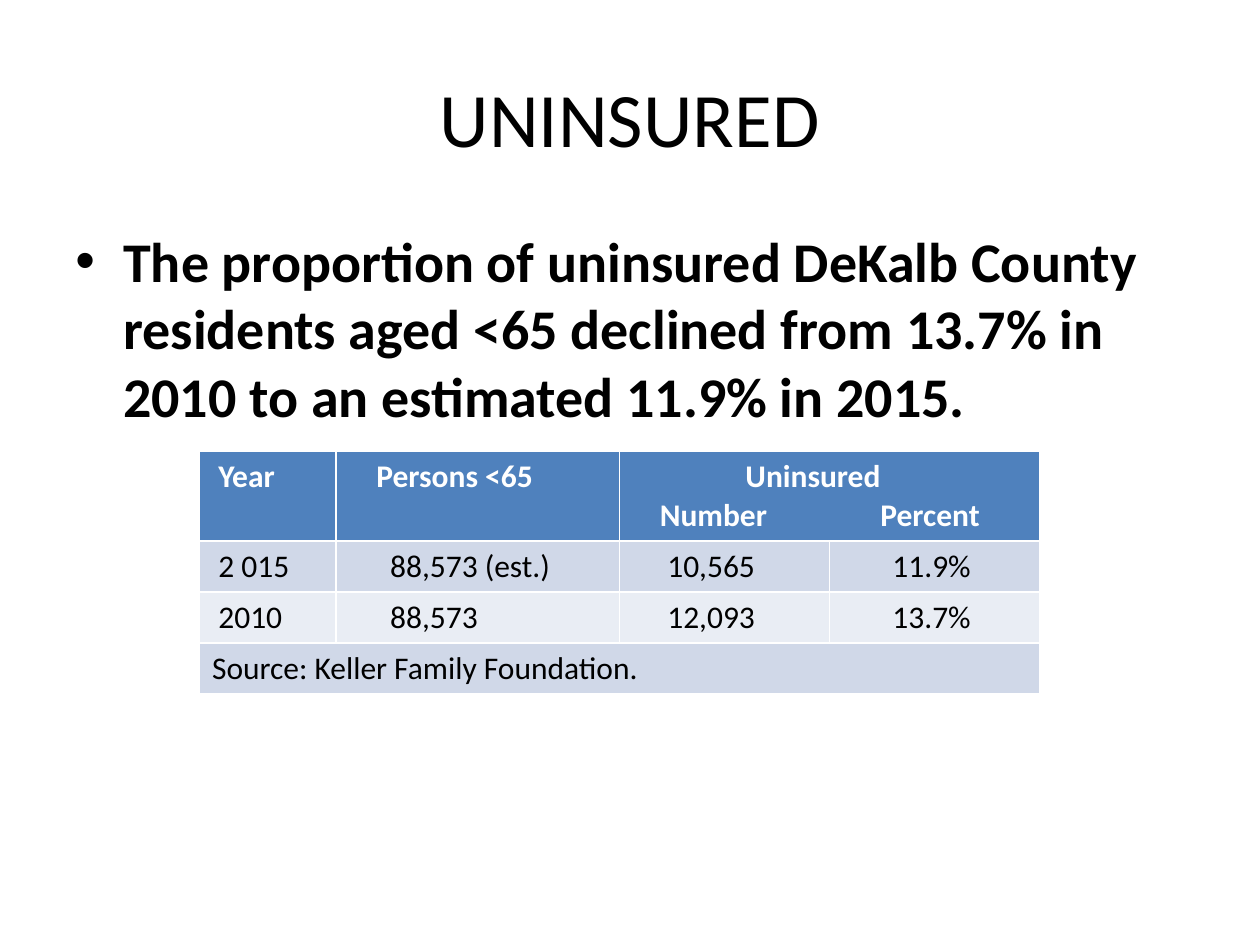
from dataclasses import dataclass

from lxml import etree
from pptx import Presentation
from pptx.dml.color import RGBColor
from pptx.enum import text
from pptx.oxml import ns
from pptx.util import Inches, Pt

WIDTH, HEIGHT = Inches(10), Inches(7.5)
COLUMNS, ROWS = 120, 90
FONT = "Calibri"
BLACK, WHITE = "000000", "FFFFFF"
HEADER, BAND, PLAIN = "4F81BD", "D0D8E8", "E9EDF4"


@dataclass
class Area:
    column: float
    row: float
    columns: float
    rows: float

    def lengths(self) -> tuple[int, int, int, int]:
        return (across(self.column), down(self.row),
                across(self.columns), down(self.rows))


@dataclass
class Style:
    size: float
    color: str = BLACK
    bold: bool = False


@dataclass
class Line:
    words: str
    indent: float = 0
    tabs: tuple[float, ...] = ()


@dataclass
class Entry:
    row: int
    column: int
    lines: list[Line]
    last_column: int | None = None


def across(columns: float) -> int:
    return round(WIDTH * columns / COLUMNS)


def down(rows: float) -> int:
    return round(HEIGHT * rows / ROWS)


def color(value: str) -> RGBColor:
    return RGBColor.from_string(value)


def style_para(para, style: Style) -> None:
    para.font.name = FONT
    para.font.size = Pt(style.size)
    para.font.bold = style.bold
    para.font.color.rgb = color(style.color)


def add_text(page, area: Area, words: str, style: Style):
    box = page.shapes.add_textbox(*area.lengths())
    box.text_frame.word_wrap = True
    para = box.text_frame.paragraphs[0]
    para.text = words
    style_para(para, style)
    return box, para


def add_bullet(para, indent: float) -> None:
    properties = para._p.get_or_add_pPr()
    properties.set("marL", str(Inches(indent)))
    properties.set("indent", str(-Inches(indent)))
    font = etree.Element(ns.qn("a:buFont"), typeface="Arial")
    mark = etree.Element(ns.qn("a:buChar"), char="•")
    spot = properties.find(ns.qn("a:defRPr"))
    spot.addprevious(font)
    spot.addprevious(mark)


def set_line(para, line: Line, style: Style) -> None:
    para.text = line.words
    style_para(para, style)
    properties = para._p.get_or_add_pPr()
    properties.set("marL", str(Inches(line.indent)))
    if line.tabs:
        stops = etree.Element(ns.qn("a:tabLst"))
        for position in line.tabs:
            etree.SubElement(stops, ns.qn("a:tab"), pos=str(Inches(position)), algn="l")
        properties.find(ns.qn("a:defRPr")).addprevious(stops)


def add_grid(page, area: Area, widths: list[float], heights: list[float],
             fills: list[str], entries: list[Entry]) -> None:
    table = page.shapes.add_table(len(heights), len(widths), *area.lengths()).table
    for column, width in zip(table.columns, widths):
        column.width = across(width)
    for row, height, fill in zip(table.rows, heights, fills):
        row.height = down(height)
        for cell in row.cells:
            cell.fill.solid()
            cell.fill.fore_color.rgb = color(fill)
    for entry in entries:
        cell = table.cell(entry.row, entry.column)
        if entry.last_column is not None:
            cell.merge(table.cell(entry.row, entry.last_column))
        style = Style(18, WHITE, True) if entry.row == 0 else Style(18)
        frame = cell.text_frame
        for index, line in enumerate(entry.lines):
            para = frame.add_paragraph() if index else frame.paragraphs[0]
            set_line(para, line, style)


def main() -> None:
    deck = Presentation()
    deck.slide_width, deck.slide_height = WIDTH, HEIGHT
    page = deck.slides.add_slide(deck.slide_layouts[6])

    title, heading = add_text(page, Area(6, 3.6, 108, 15), "UNINSURED", Style(44))
    title.text_frame.vertical_anchor = text.MSO_ANCHOR.MIDDLE
    heading.alignment = text.PP_ALIGN.CENTER

    finding = ("The proportion of uninsured DeKalb County residents aged <65 "
               "declined from 13.7% in 2010 to an estimated 11.9% in 2015.")
    _, point = add_text(page, Area(6, 21, 108, 59.4), finding, Style(32, bold=True))
    point.space_before = Pt(2)
    add_bullet(point, 0.38)

    entries = [
        Entry(0, 0, [Line("Year", 0.05)]),
        Entry(0, 1, [Line("Persons <65", 0.22)]),
        Entry(0, 2, [Line("Uninsured", 0.9),
                     Line("\tNumber\tPercent", tabs=(0.22, 1.97))], 3),
        Entry(3, 0, [Line("Source: Keller Family Foundation.")], 3),
    ]
    records = [("2 015", "88,573 (est.)", "10,565", "11.9%"),
               ("2010", "88,573", "12,093", "13.7%")]
    indents = (0.05, 0.33, 0.28, 0.4)
    for row, record in enumerate(records, 1):
        for column, (words, indent) in enumerate(zip(record, indents)):
            entries.append(Entry(row, column, [Line(words, indent)]))

    widths = [13, 27, 20, 20]
    heights = [8.5] + [4.87] * 3
    add_grid(page, Area(19, 43, sum(widths), sum(heights)), widths, heights,
             [HEADER, BAND, PLAIN, BAND], entries)
    deck.save("out.pptx")


if __name__ == "__main__":
    main()
